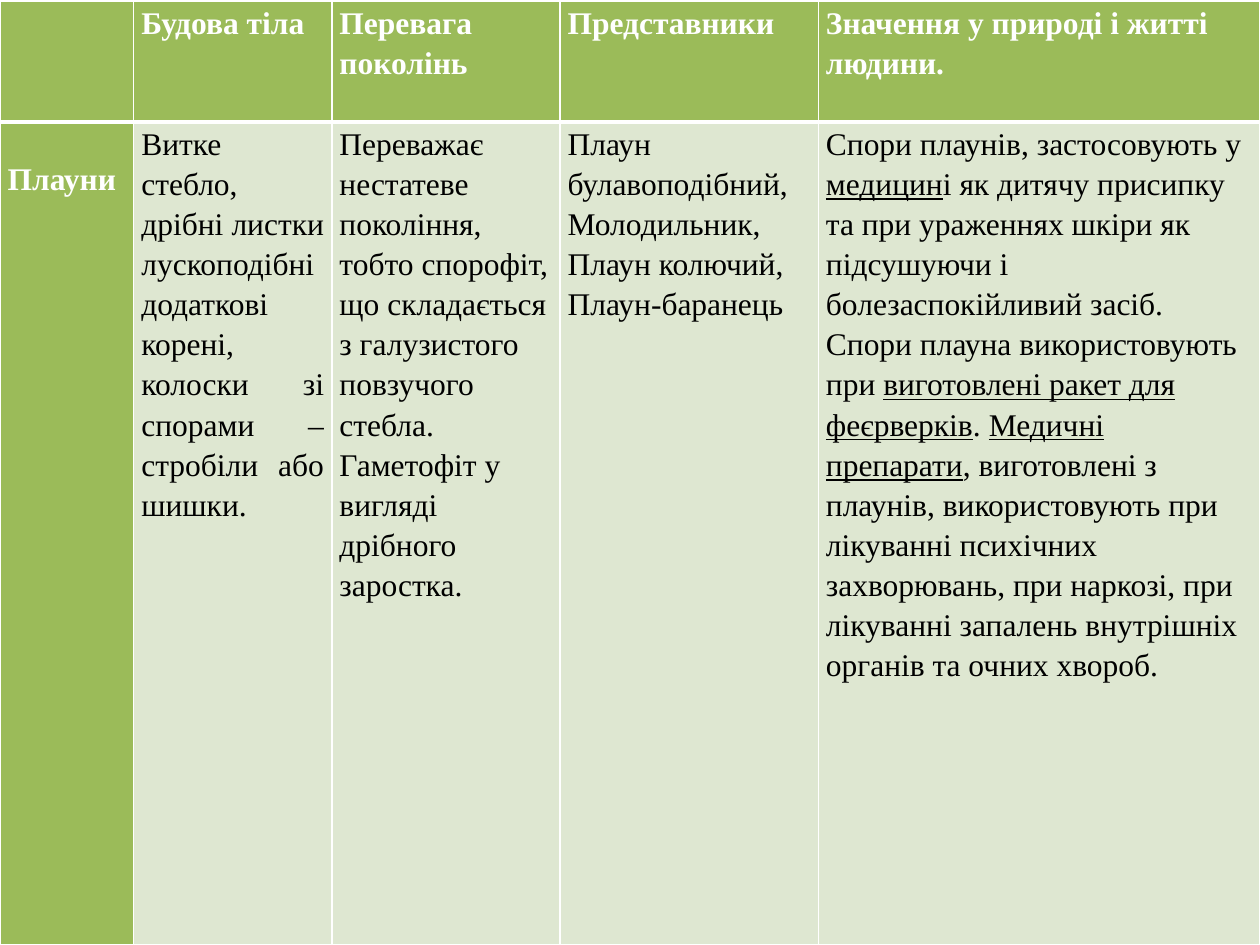
"""Build a slide with a table describing clubmosses."""
from dataclasses import dataclass

import lxml.etree
import pptx
import pptx.dml.color
import pptx.enum.text
import pptx.oxml.ns
import pptx.table
import pptx.util

Pt = pptx.util.Pt
RGB = pptx.dml.color.RGBColor
ALIGN = pptx.enum.text.PP_ALIGN


@dataclass(frozen=True)
class Theme:
    accent: str = "9BBB59"
    pale: str = "DEE7D1"
    light: str = "FFFFFF"
    dark: str = "000000"
    font: str = "Times New Roman"
    size: float = 18
    line_spacing: float = 1.15
    thin: float = 1
    thick: float = 3
    margin: float = 4.4


@dataclass(frozen=True)
class Run:
    text: str
    underline: bool = False


@dataclass(frozen=True)
class Entry:
    paragraphs: tuple[tuple[Run, ...], ...] = ()
    heading: bool = False
    justified: bool = False
    top: float = 0


THEME = Theme()
WIDTH, HEIGHT = 720, 540
TABLE_TOP = 0.7
COLUMNS = (76.4, 113.2, 130.4, 147.6, 252.2)
ROWS = (69.1, 470.2)


def entry(*lines: str, heading: bool = False, justified: bool = False,
          top: float = 0) -> Entry:
    return Entry(tuple((Run(line),) for line in lines), heading, justified, top)


USES = (
    Run("Спори плаунів, застосовують у "),
    Run("медицин", True),
    Run("і як дитячу присипку та при ураженнях шкіри як підсушуючи і "
        "болезаспокійливий засіб. Спори плауна використовують при "),
    Run("виготовлені ракет для феєрверків", True),
    Run(". "),
    Run("Медичні препарати", True),
    Run(", виготовлені з плаунів, використовують при лікуванні психічних "
        "захворювань, при наркозі, при лікуванні запалень внутрішніх органів "
        "та очних хвороб."),
)

HEADER = (
    entry(heading=True),
    entry("Будова тіла", heading=True),
    entry("Перевага", "поколінь", heading=True),
    entry("Представники", heading=True),
    entry("Значення у природі і житті людини.", heading=True),
)

CLUBMOSSES = (
    entry("Плауни", heading=True, justified=True, top=20),
    entry("Витке стебло, дрібні листки лускоподібні додаткові корені, "
          "колоски зі спорами – стробіли або шишки.", justified=True),
    entry("Переважає нестатеве покоління, тобто спорофіт, що складається "
          "з галузистого повзучого стебла.",
          "Гаметофіт у вигляді дрібного заростка."),
    entry("Плаун булавоподібний,", "Молодильник,", "Плаун колючий,",
          "Плаун-баранець"),
    Entry((USES,)),
)


def set_border(cell: pptx.table._Cell, side: str, width: float) -> None:
    qn = pptx.oxml.ns.qn
    ln = lxml.etree.SubElement(cell._tc.get_or_add_tcPr(), qn(f"a:ln{side}"),
                               w=str(Pt(width)))
    fill = lxml.etree.SubElement(ln, qn("a:solidFill"))
    lxml.etree.SubElement(fill, qn("a:srgbClr"), val=THEME.light)


def fill_cell(cell: pptx.table._Cell, item: Entry, borders: dict[str, float]) -> None:
    for side, width in borders.items():
        set_border(cell, side, width)
    cell.fill.solid()
    cell.fill.fore_color.rgb = RGB.from_string(
        THEME.accent if item.heading else THEME.pale)
    cell.margin_left = cell.margin_right = Pt(THEME.margin)
    cell.margin_top, cell.margin_bottom = Pt(item.top), Pt(0)
    tf = cell.text_frame
    for i, runs in enumerate(item.paragraphs):
        p = tf.add_paragraph() if i else tf.paragraphs[0]
        p.line_spacing = THEME.line_spacing
        p.alignment = ALIGN.JUSTIFY if item.justified else ALIGN.LEFT
        for run in runs:
            r = p.add_run()
            r.text = run.text
            r.font.name = THEME.font
            r.font.size = Pt(THEME.size)
            r.font.bold = item.heading
            r.font.underline = run.underline
            r.font.color.rgb = RGB.from_string(
                THEME.light if item.heading else THEME.dark)


def add_plant_table(s: pptx.slide.Slide) -> None:
    table = s.shapes.add_table(len(ROWS), len(COLUMNS), Pt(0), Pt(TABLE_TOP),
                               Pt(sum(COLUMNS)), Pt(sum(ROWS))).table
    for column, width in zip(table.columns, COLUMNS):
        column.width = Pt(width)
    for row, height in zip(table.rows, ROWS):
        row.height = Pt(height)
    thin, thick = THEME.thin, THEME.thick
    edges = (dict(L=thin, R=thin, T=thin, B=thick),
             dict(L=thin, R=thin, T=thick, B=thin))
    for row, items, borders in zip(table.rows, (HEADER, CLUBMOSSES), edges):
        for cell, item in zip(row.cells, items):
            fill_cell(cell, item, borders)


def main() -> None:
    prs = pptx.Presentation()
    prs.slide_width, prs.slide_height = Pt(WIDTH), Pt(HEIGHT)
    s = prs.slides.add_slide(prs.slide_layouts[6])
    add_plant_table(s)
    prs.save("out.pptx")


if __name__ == "__main__":
    main()
